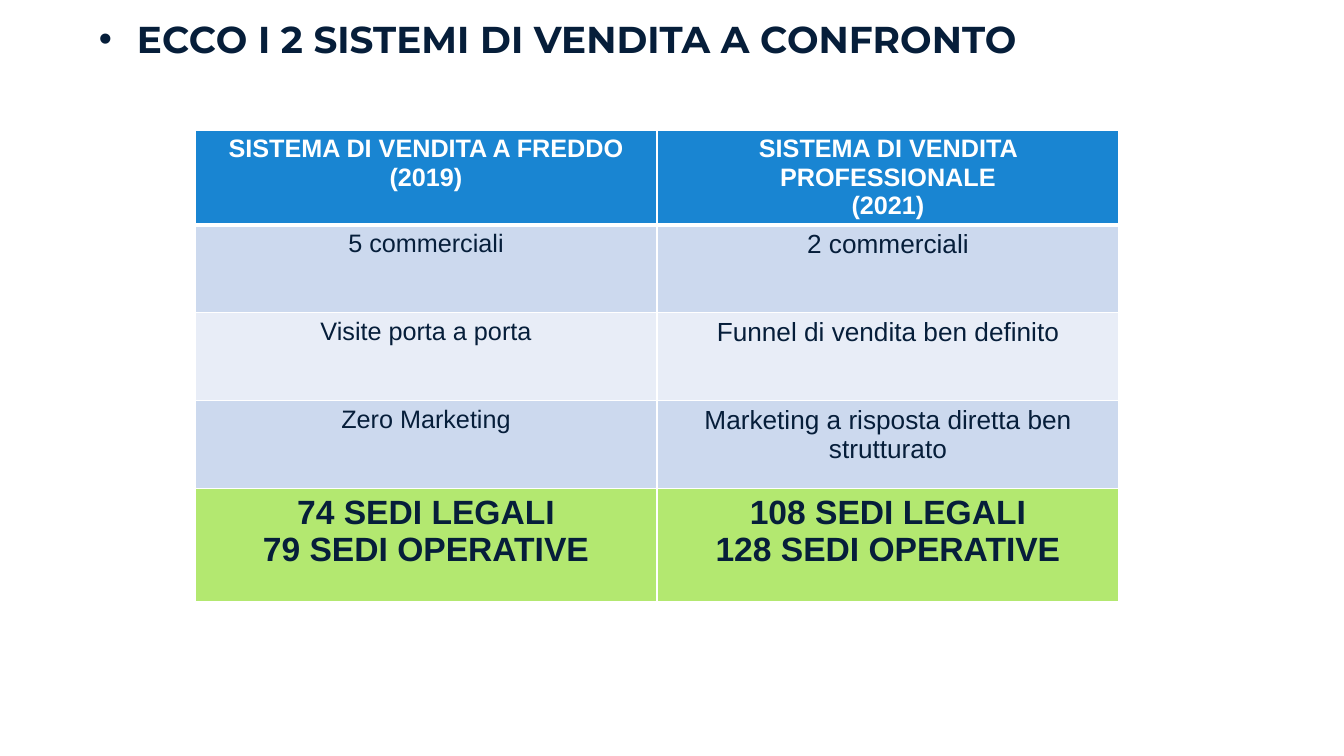
from lxml import etree
from pptx import Presentation
from pptx.dml.color import RGBColor
from pptx.enum.text import MSO_AUTO_SIZE, MSO_ANCHOR, PP_ALIGN
from pptx.oxml.ns import qn
from pptx.util import Emu, Pt

CENTER = PP_ALIGN.CENTER
TOP = MSO_ANCHOR.TOP
NO_AUTOFIT = MSO_AUTO_SIZE.NONE
EMU_PER_PX = 914400 / 100.8

NAVY, WHITE = "061E3A", "FFFFFF"
BLUE, PALE, PALER, GREEN = "1985D2", "CCD9EE", "E8EDF7", "B3E870"


def px(length):
    return Emu(round(length * EMU_PER_PX))


def style(paragraph, name, size, color, bold):
    font = paragraph.font
    font.name, font.size, font.bold = name, Pt(size), bold
    font.color.rgb = RGBColor.from_string(color)


deck = Presentation()
deck.slide_width, deck.slide_height = px(1344), px(756)
page = deck.slides.add_slide(deck.slide_layouts[1])
unused_title = page.shapes.title.element
unused_title.getparent().remove(unused_title)

# Bulleted heading
heading = page.placeholders[1]
heading.left, heading.top, heading.width, heading.height = px(87), px(21), px(1200), px(92)
frame = heading.text_frame
frame.margin_left = frame.margin_top = frame.margin_right = frame.margin_bottom = 0
frame.word_wrap = True
frame.auto_size = NO_AUTOFIT
frame.vertical_anchor = TOP
frame.text = "ECCO I 2 SISTEMI DI VENDITA A CONFRONTO"
para = frame.paragraphs[0]
properties = para._p.get_or_add_pPr()
properties.set("marL", str(px(50)))
properties.set("indent", str(px(-38)))
bullet_color = etree.SubElement(properties, qn("a:buClr"))
etree.SubElement(bullet_color, qn("a:srgbClr"), val=NAVY)
etree.SubElement(properties, qn("a:buFont"), typeface="Arial")
etree.SubElement(properties, qn("a:buChar"), char="•")
para.line_spacing = 0.9
para.space_before = Pt(0)
style(para, "Montserrat", 26.7, NAVY, True)

# Comparison table: height, fill, text colour, bold, sizes and texts of each row
rows = [
    (94, BLUE, WHITE, True, (18, 18),
     ("SISTEMA DI VENDITA A FREDDO\n(2019)", "SISTEMA DI VENDITA PROFESSIONALE\n(2021)")),
    (88, PALE, NAVY, False, (18, 18.7), ("5 commerciali", "2 commerciali")),
    (88, PALER, NAVY, False, (18, 18.7), ("Visite porta a porta", "Funnel di vendita ben definito")),
    (88, PALE, NAVY, False, (18, 18.7),
     ("Zero Marketing", "Marketing a risposta diretta ben strutturato")),
    (113, GREEN, NAVY, True, (24, 24),
     ("74 SEDI LEGALI\n79 SEDI OPERATIVE", "108 SEDI LEGALI\n128 SEDI OPERATIVE")),
]
total_height = sum(row[0] for row in rows)
table = page.shapes.add_table(len(rows), 2, px(195), px(130), px(924), px(total_height)).table
for column in table.columns:
    column.width = px(462)

for row_index, (height, fill, color, bold, sizes, texts) in enumerate(rows):
    table.rows[row_index].height = px(height)
    top_width = 3 if row_index == 1 else 1
    bottom_width = 3 if row_index == 0 else 1
    borders = {"a:lnL": 1, "a:lnR": 1, "a:lnT": top_width, "a:lnB": bottom_width}
    for column_index, (size, text) in enumerate(zip(sizes, texts)):
        cell = table.cell(row_index, column_index)
        cell.text = text
        cell.vertical_anchor = TOP
        for para in cell.text_frame.paragraphs:
            para.alignment = CENTER
            style(para, "Arial", size, color, bold)
        cell_properties = cell._tc.get_or_add_tcPr()
        for side, width in borders.items():
            line = etree.SubElement(cell_properties, qn(side), w=str(Pt(width)))
            line_fill = etree.SubElement(line, qn("a:solidFill"))
            etree.SubElement(line_fill, qn("a:srgbClr"), val=WHITE)
        cell.fill.solid()
        cell.fill.fore_color.rgb = RGBColor.from_string(fill)

deck.save("out.pptx")
